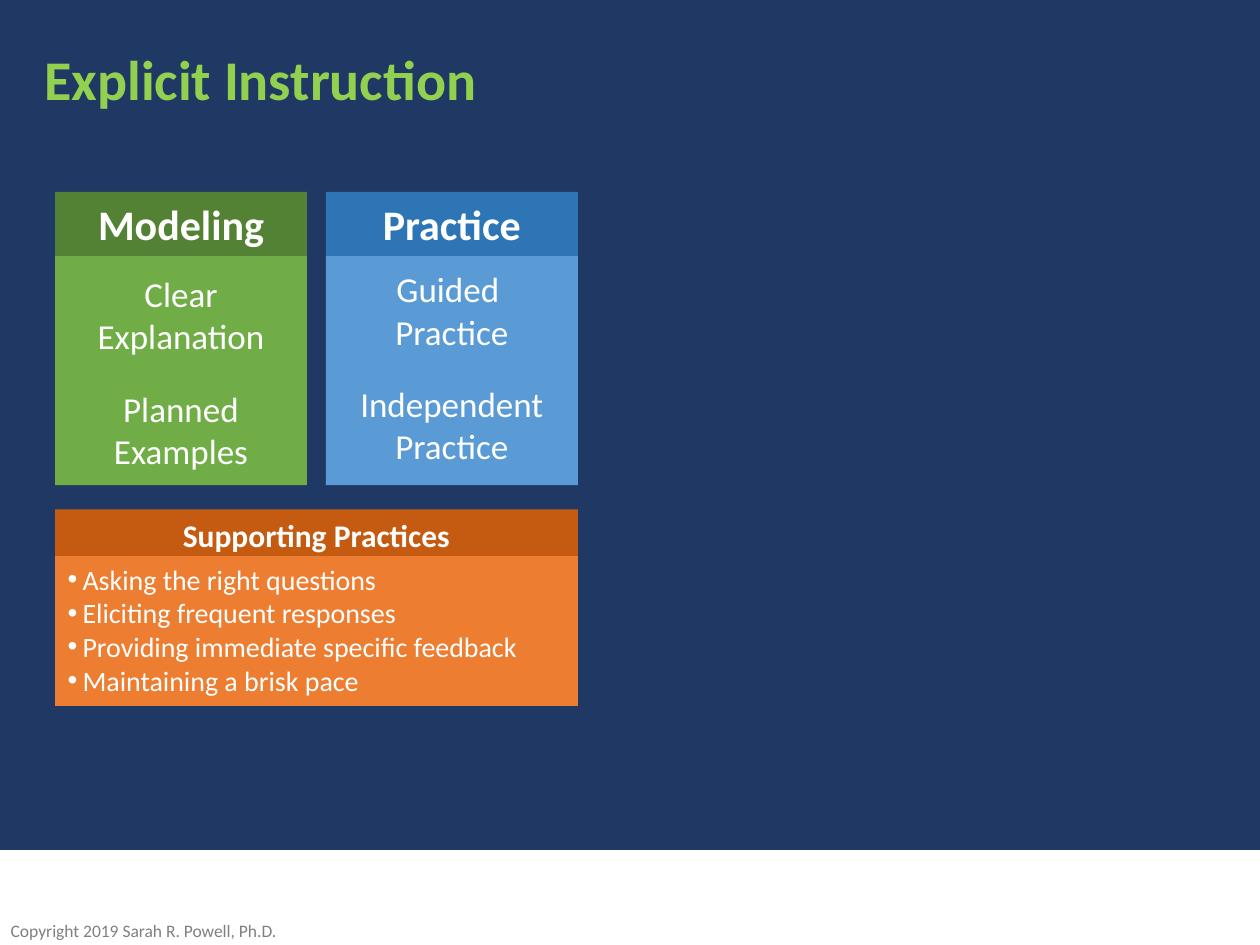
from lxml import etree
from pptx import Presentation
from pptx.dml.color import RGBColor
from pptx.enum.shapes import MSO_SHAPE
from pptx.enum.text import MSO_ANCHOR, MSO_AUTO_SIZE, PP_ALIGN
from pptx.oxml.ns import qn
from pptx.util import Cm, Pt

RECT = MSO_SHAPE.RECTANGLE
TOP, MIDDLE = MSO_ANCHOR.TOP, MSO_ANCHOR.MIDDLE
LEFT, CENTER, RIGHT = PP_ALIGN.LEFT, PP_ALIGN.CENTER, PP_ALIGN.RIGHT

NAVY = RGBColor(0x20, 0x38, 0x64)
WHITE = RGBColor(0xFF, 0xFF, 0xFF)
GRAY = RGBColor(0x80, 0x80, 0x80)
LIME = RGBColor(0x92, 0xD0, 0x50)
DARK_GREEN = RGBColor(0x54, 0x82, 0x35)
GREEN = RGBColor(0x70, 0xAD, 0x47)
DARK_BLUE = RGBColor(0x2E, 0x75, 0xB6)
BLUE = RGBColor(0x5B, 0x9B, 0xD5)
DARK_ORANGE = RGBColor(0xC5, 0x5A, 0x11)
ORANGE = RGBColor(0xED, 0x7D, 0x31)
FONT = "Calibri"

TITLE = "Explicit Instruction"
COPYRIGHT = "Copyright 2019 Sarah R. Powell, Ph.D."
# heading, heading colour, box colour, boxes as (lines, height in cm)
COLUMNS = [
    ("Modeling", DARK_GREEN, GREEN,
     [(["Clear Explanation"], 2.36), (["Planned", "Examples"], 2.26)]),
    ("Practice", DARK_BLUE, BLUE,
     [(["Guided ", "Practice"], 2.18), (["Independent Practice"], 2.44)]),
]
SUPPORT_HEADING = "Supporting Practices"
SUPPORT_ITEMS = [
    "Asking the right questions",
    "Eliciting frequent responses",
    "Providing immediate specific feedback",
    "Maintaining a brisk pace",
]

# Layout in cm
GRID_X, GRID_Y = 1.11, 3.87
COL_W, COL_GAP = 5.08, 0.38
HEAD_H, BOX_Y = 1.29, 5.16
SUPPORT_Y, SUPPORT_HEAD_H = 10.27, 1.2
LIST_Y, LIST_H = 11.21, 3.02
INDENT = 0.3
grid_w = len(COLUMNS) * (COL_W + COL_GAP) - COL_GAP


def place(sp, x, y, w, h):
    sp.left, sp.top, sp.width, sp.height = Cm(x), Cm(y), Cm(w), Cm(h)


def write(sp, lines, size, color=WHITE, bold=False, align=CENTER, anchor=MIDDLE):
    tf = sp.text_frame
    tf.word_wrap = True
    tf.auto_size = MSO_AUTO_SIZE.NONE
    tf.vertical_anchor = anchor
    for i, line in enumerate(lines):
        p = tf.paragraphs[0] if i == 0 else tf.add_paragraph()
        p.alignment = align
        p.space_before = Pt(0)
        r = p.add_run()
        r.text = line
        r.font.name, r.font.size, r.font.bold = FONT, Pt(size), bold
        r.font.color.rgb = color
    return tf


def fill(sp, color):
    sp.fill.solid()
    sp.fill.fore_color.rgb = color


def add_box(x, y, w, h, color):
    sp = slide.shapes.add_shape(RECT, Cm(x), Cm(y), Cm(w), Cm(h))
    sp.shadow.inherit = False
    fill(sp, color)
    sp.line.fill.background()
    return sp


def add_bullet(p):
    pPr = p._p.get_or_add_pPr()
    pPr.set("marL", str(Cm(INDENT)))
    pPr.set("indent", str(-Cm(INDENT)))
    etree.SubElement(pPr, qn("a:buFont"), typeface="Arial")
    etree.SubElement(pPr, qn("a:buChar"), char="•")
    tabs = etree.SubElement(pPr, qn("a:tabLst"))
    etree.SubElement(tabs, qn("a:tab"), pos=str(Cm(INDENT)), algn="l")


prs = Presentation()
prs.slide_width, prs.slide_height = Cm(25.4), Cm(19.05)
slide = prs.slides.add_slide(prs.slide_layouts[1])
fill(slide.background, NAVY)

title, body = slide.placeholders
place(title, 0.64, 0.64, 24.13, 2.03)
fill(title, NAVY)
tf = write(title, [TITLE], 32, LIME, bold=True, align=LEFT, anchor=TOP)
tf.paragraphs[0].line_spacing = 1.1

strip = add_box(0, 17.16, 25.4, 1.89, WHITE)
strip.line.color.rgb = WHITE
strip.line.width = Pt(1)
footer = slide.shapes.add_textbox(Cm(0), Cm(18.54), Cm(5.82), Cm(0.43))
tf = write(footer, [COPYRIGHT], 10, GRAY, align=RIGHT)
tf.margin_left = tf.margin_top = tf.margin_bottom = 0

for i, (heading, head_color, box_color, boxes) in enumerate(COLUMNS):
    x, y = GRID_X + i * (COL_W + COL_GAP), BOX_Y
    for lines, h in boxes:
        write(add_box(x, y, COL_W, h, box_color), lines, 20)
        y += h
    head = add_box(x, GRID_Y, COL_W, HEAD_H, head_color)
    write(head, [heading], 24, bold=True, anchor=TOP)

head = add_box(GRID_X, SUPPORT_Y, grid_w, SUPPORT_HEAD_H, DARK_ORANGE)
write(head, [SUPPORT_HEADING], 18, bold=True, anchor=TOP)

place(body, GRID_X, LIST_Y, grid_w, LIST_H)
fill(body, ORANGE)
for p in write(body, SUPPORT_ITEMS, 16, align=LEFT, anchor=TOP).paragraphs:
    add_bullet(p)
# The list overlaps the foot of its heading, so it goes in front
slide.shapes._spTree.append(body._element)

prs.save("out.pptx")
